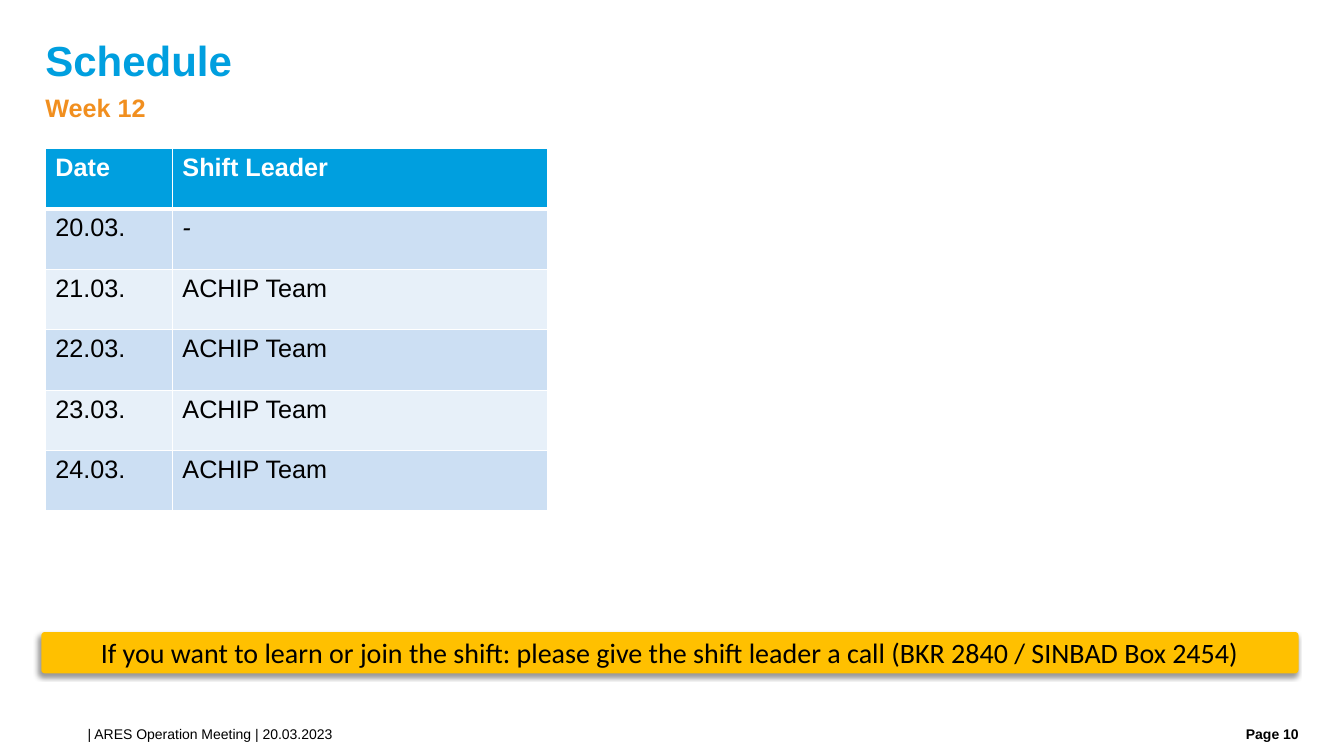
from lxml.etree import SubElement
from pptx import Presentation
from pptx.dml.color import RGBColor
from pptx.enum.shapes import MSO_SHAPE
from pptx.enum.text import MSO_ANCHOR, PP_ALIGN
from pptx.oxml.ns import qn
from pptx.util import Inches, Pt

COLORS = {
    "blue": "009FDF",
    "orange": "F18F1F",
    "yellow": "FFC000",
    "band": "CCDFF3",
    "light": "E7F0F9",
    "white": "FFFFFF",
    "black": "000000",
}
SCHEDULE = [
    ("Date", "Shift Leader"),
    ("20.03.", "-"),
    ("21.03.", "ACHIP Team"),
    ("22.03.", "ACHIP Team"),
    ("23.03.", "ACHIP Team"),
    ("24.03.", "ACHIP Team"),
]


def color(name):
    return RGBColor.from_string(COLORS[name])


def write(frame, text, tint="black", align=PP_ALIGN.LEFT, spacing=1.0, **font_format):
    para = frame.paragraphs[0]
    para.alignment = align
    para.line_spacing = spacing
    span = para.add_run()
    span.text = text
    span.font.color.rgb = color(tint)
    for name, value in {"name": "Arial", "bold": False, **font_format}.items():
        setattr(span.font, name, value)


def set_frame(frame, anchor):
    values = {"word_wrap": True, "vertical_anchor": anchor}
    values.update({f"margin_{side}": 0 for side in ("left", "top", "right", "bottom")})
    for name, value in values.items():
        setattr(frame, name, value)


def add_text(page, box, text, anchor=MSO_ANCHOR.TOP, **style):
    frame = page.shapes.add_textbox(*map(Inches, box)).text_frame
    set_frame(frame, anchor)
    write(frame, text, **style)


def add_heading(page, box):
    left, top, width, height = box
    title = page.shapes.title
    places = {"left": left, "top": top, "width": width, "height": 0.49}
    for name, value in places.items():
        setattr(title, name, Inches(value))
    set_frame(title.text_frame, MSO_ANCHOR.MIDDLE)
    write(title.text_frame, "Schedule", "blue", spacing=0.9, size=Pt(30), bold=True)
    add_text(page, (left, top + 0.51, width, height - 0.51), "Week 12",
             tint="orange", spacing=1.1, size=Pt(18), bold=True)


def set_borders(cell, bottom_width):
    properties = cell._tc.get_or_add_tcPr()
    widths = {"a:lnL": 1, "a:lnR": 1, "a:lnT": 1, "a:lnB": bottom_width}
    for position, (tag, width) in enumerate(widths.items()):
        line = SubElement(properties, qn(tag), w=str(Pt(width)))
        fill = SubElement(line, qn("a:solidFill"))
        SubElement(fill, qn("a:srgbClr"), val=COLORS["white"])
        properties.insert(position, line)


def add_schedule(page, box):
    table = page.shapes.add_table(len(SCHEDULE), 2, *map(Inches, box)).table
    date_width = 1.26
    for column, width in zip(table.columns, (date_width, box[2] - date_width)):
        column.width = Inches(width)
    for row, entries in enumerate(SCHEDULE):
        header = row == 0
        fill = "blue" if header else ("light", "band")[row % 2]
        for column, text in enumerate(entries):
            cell = table.cell(row, column)
            cell.fill.solid()
            cell.fill.fore_color.rgb = color(fill)
            set_borders(cell, 3 if header else 1)
            write(cell.text_frame, text, "white" if header else "black",
                  size=Pt(18), bold=header, italic=text == "-")


def add_shadow(shape):
    effects = SubElement(shape._element.spPr, qn("a:effectLst"))
    shadow = SubElement(effects, qn("a:outerShdw"), blurRad=str(Pt(4)),
                        dist=str(Pt(3)), dir=str(135 * 60000), algn="tr", rotWithShape="0")
    tone = SubElement(shadow, qn("a:srgbClr"), val=COLORS["black"])
    SubElement(tone, qn("a:alpha"), val="40000")


def add_notice(page, box):
    notice = page.shapes.add_shape(MSO_SHAPE.ROUNDED_RECTANGLE, *map(Inches, box))
    notice.adjustments[0] = 0.085
    notice.fill.solid()
    notice.fill.fore_color.rgb = color("yellow")
    notice.line.fill.background()
    add_shadow(notice)
    set_frame(notice.text_frame, MSO_ANCHOR.MIDDLE)
    write(notice.text_frame,
          "If you want to learn or join the shift: please give the shift leader a call "
          "(BKR 2840 / SINBAD Box 2454)",
          align=PP_ALIGN.CENTER, name="Calibri", size=Pt(20))


def add_footer(page, box):
    left, top, width, height = box
    number_width = 1.02
    add_text(page, (left, top, width - number_width - 0.11, height),
             "| ARES Operation Meeting | 20.03.2023", size=Pt(10))
    add_text(page, (left + width - number_width, top, number_width, height),
             "Page 10", align=PP_ALIGN.RIGHT, size=Pt(10), bold=True)


def main():
    deck = Presentation()
    deck.slide_width, deck.slide_height = Inches(13.33), Inches(7.5)
    page = deck.slides.add_slide(deck.slide_layouts[5])
    add_heading(page, (0.45, 0.38, 12.44, 0.92))
    add_schedule(page, (0.45, 1.47, 4.98, 3.6))
    add_notice(page, (0.41, 6.27, 12.47, 0.41))
    add_footer(page, (0.87, 7.2, 12.01, 0.2))
    deck.save("out.pptx")


if __name__ == "__main__":
    main()
